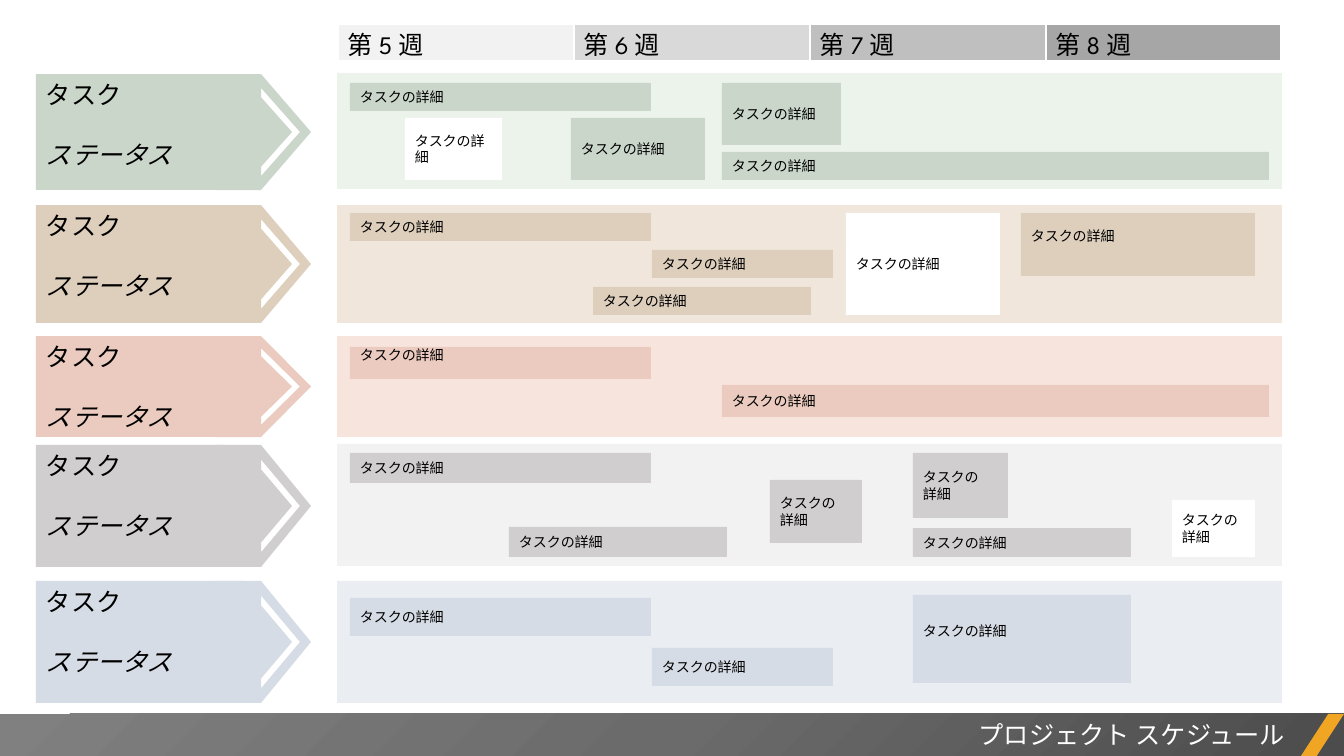
from pptx import Presentation
from pptx.dml.color import RGBColor
from pptx.enum.shapes import MSO_SHAPE
from pptx.enum.text import MSO_ANCHOR, MSO_AUTO_SIZE, PP_ALIGN
from pptx.oxml import parse_xml
from pptx.oxml.ns import nsdecls, qn
from pptx.util import Emu, Pt

RECTANGLE, PARALLELOGRAM = MSO_SHAPE.RECTANGLE, MSO_SHAPE.PARALLELOGRAM
TOP, MIDDLE = MSO_ANCHOR.TOP, MSO_ANCHOR.MIDDLE
LEFT, RIGHT = PP_ALIGN.LEFT, PP_ALIGN.RIGHT
GROW = MSO_AUTO_SIZE.SHAPE_TO_FIT_TEXT

BLACK = RGBColor(0x00, 0x00, 0x00)
WHITE = RGBColor(0xFF, 0xFF, 0xFF)
GREEN, PALE_GREEN = RGBColor(0xCA, 0xD6, 0xCA), RGBColor(0xEC, 0xF3, 0xEB)
SAND, PALE_SAND = RGBColor(0xDD, 0xCF, 0xBC), RGBColor(0xF0, 0xE6, 0xDC)
ROSE, PALE_ROSE = RGBColor(0xEB, 0xCB, 0xBF), RGBColor(0xF7, 0xE5, 0xDD)
GRAY, PALE_GRAY = RGBColor(0xD0, 0xCE, 0xCE), RGBColor(0xF2, 0xF2, 0xF2)
BLUE, PALE_BLUE = RGBColor(0xD6, 0xDC, 0xE5), RGBColor(0xEA, 0xEE, 0xF3)
AMBER = RGBColor(0xF0, 0xA6, 0x22)
FOOTER_STOPS = [(0, RGBColor(0x4C, 0x4C, 0x4C)), (50, RGBColor(0x6B, 0x6B, 0x6B)),
                (100, RGBColor(0x80, 0x80, 0x80))]

FONT = "League Spartan"
TITLE = "プロジェクト スケジュール"
TASK, STATUS = "タスク", "ステータス"
DETAIL, SPLIT_DETAIL = "タスクの詳細", "タスクの\n詳細"
WEEKS = [
    ("第 5 週", RGBColor(0xF2, 0xF2, 0xF2)),
    ("第 6 週", RGBColor(0xD9, 0xD9, 0xD9)),
    ("第 7 週", RGBColor(0xBF, 0xBF, 0xBF)),
    ("第 8 週", RGBColor(0xA6, 0xA6, 0xA6)),
]
# Details: (left, top, width, height), text, white box?, text raised by half a line?
LANES = [
    {"label": (74, 188), "band": 73, "height": 116, "colors": (GREEN, PALE_GREEN), "details": [
        ((350, 83, 301, 28), DETAIL, False, False),
        ((571, 118, 134, 62), DETAIL, False, False),
        ((405, 118, 97, 62), DETAIL, True, False),
        ((722, 83, 119, 62), DETAIL, False, False),
        ((722, 152, 547, 28), DETAIL, False, False)]},
    {"label": (205, 207), "band": 205, "height": 118, "colors": (SAND, PALE_SAND), "details": [
        ((350, 213, 301, 28), DETAIL, False, False),
        ((846, 213, 154, 102), DETAIL, True, False),
        ((1021, 213, 234, 63), DETAIL, False, True),
        ((652, 250, 181, 28), DETAIL, False, False),
        ((593, 287, 218, 28), DETAIL, False, False)]},
    {"label": (336, 188), "band": 336, "height": 101, "colors": (ROSE, PALE_ROSE), "details": [
        ((350, 347, 301, 32), DETAIL, False, True),
        ((722, 385, 547, 32), DETAIL, False, False)]},
    {"label": (445, 188), "band": 444, "height": 122, "colors": (GRAY, PALE_GRAY), "details": [
        ((350, 453, 301, 30), DETAIL, False, False),
        ((1172, 500, 83, 57), SPLIT_DETAIL, True, False),
        ((913, 453, 95, 65), SPLIT_DETAIL, False, False),
        ((770, 480, 92, 63), SPLIT_DETAIL, False, False),
        ((509, 527, 218, 30), DETAIL, False, False),
        ((913, 528, 218, 29), DETAIL, False, False)]},
    {"label": (581, 207), "band": 581, "height": 122, "colors": (BLUE, PALE_BLUE), "details": [
        ((350, 598, 301, 38), DETAIL, False, False),
        ((652, 648, 181, 38), DETAIL, False, False),
        ((913, 595, 218, 88), DETAIL, False, True)]},
]
# Arrow outlines: x in px, y as a share of the lane height
ARROW_HEAD = [(261, 0), (215, 0), (215, 1), (261, 1), (311, 0.5)]
ARROW_NOTCH = [(261, 0.8), (292, 0.5), (261, 0.2), (261, 0.12), (300, 0.5), (261, 0.88)]

SLIDE_W, SLIDE_H = 1344, 756
LABEL_LEFT, BAND_LEFT, BAND_W = 36, 337, 945
WEEK_LEFT, WEEK_TOP, WEEK_W, WEEK_H = 338, 24, 236, 33
FOOTER_TOP, FOOTER_H = 714, 42
DETAIL_LINE = 17
SCALE = 914400 / 100.8


def px(length):
    return Emu(round(length * SCALE))


def paint(shape, color):
    shape.shadow.inherit = False
    shape.fill.solid()
    shape.fill.fore_color.rgb = color
    shape.line.fill.background()


def add_block(shapes, box, color, kind=RECTANGLE):
    block = shapes.add_shape(kind, *map(px, box))
    paint(block, color)
    return block


def write(paragraph, text, size, color=BLACK, italic=None, align=LEFT):
    paragraph.alignment = align
    for index, line in enumerate(text.split("\n")):
        if index:
            paragraph.add_line_break()
        run = paragraph.add_run()
        run.text = line
        run.font.name = FONT
        run.font.size = Pt(size)
        run.font.italic = italic
        run.font.color.rgb = color


def add_arrow(shapes, top, height, color):
    outlines = [[(px(x), px(top + share * height)) for x, share in outline]
                for outline in (ARROW_HEAD, ARROW_NOTCH)]
    head, notch = outlines
    builder = shapes.build_freeform(*head[0], scale=1.0)
    builder.add_line_segments(head[1:], close=True)
    builder.move_to(*notch[0])
    builder.add_line_segments(notch[1:], close=True)
    paint(builder.convert_to_shape(), color)


def add_lane(slide, lane):
    shapes = slide.shapes.add_group_shape().shapes
    color, pale = lane["colors"]
    top, width = lane["label"]
    height = lane["height"]

    label = add_block(shapes, (LABEL_LEFT, top, width, height), color).text_frame
    label.vertical_anchor = TOP
    write(label.paragraphs[0], TASK, 18)
    status = label.add_paragraph()
    status.space_before = Pt(21.5)
    write(status, STATUS, 18, italic=True)

    add_arrow(shapes, top, height, color)
    add_block(shapes, (BAND_LEFT, lane["band"], BAND_W, height), pale)
    for box, text, is_white, is_raised in lane["details"]:
        frame = add_block(shapes, box, WHITE if is_white else color).text_frame
        frame.word_wrap = True
        frame.vertical_anchor = MIDDLE
        if is_raised:
            frame.margin_bottom = px(5 + DETAIL_LINE)
        write(frame.paragraphs[0], text, 10)


def add_cell_borders(cell):
    properties = cell._tc.get_or_add_tcPr()
    for index, side in enumerate(("lnL", "lnR", "lnT", "lnB")):
        properties.insert(index, parse_xml(
            f'<a:{side} {nsdecls("a")} w="{Pt(2.25)}"><a:solidFill>'
            f'<a:srgbClr val="{WHITE}"/></a:solidFill></a:{side}>'))


def add_weeks(slide):
    table = slide.shapes.add_table(1, len(WEEKS), px(WEEK_LEFT), px(WEEK_TOP),
                                   px(WEEK_W * len(WEEKS)), px(WEEK_H)).table
    table.first_row = table.horz_banding = False
    for column, (week, color) in enumerate(WEEKS):
        table.columns[column].width = px(WEEK_W)
        cell = table.cell(0, column)
        cell.margin_left, cell.margin_right = px(10), px(1)
        cell.margin_top, cell.margin_bottom = px(1), 0
        cell.fill.solid()
        cell.fill.fore_color.rgb = color
        add_cell_borders(cell)
        write(cell.text_frame.paragraphs[0], week, 18)


def add_footer(slide):
    bottom = FOOTER_TOP + FOOTER_H
    builder = slide.shapes.build_freeform(0, px(FOOTER_TOP), scale=1.0)
    builder.add_line_segments([(px(SLIDE_W), px(FOOTER_TOP)), (px(SLIDE_W), px(bottom)),
                               (0, px(bottom))], close=True)
    bar = builder.convert_to_shape()
    paint(bar, FOOTER_STOPS[0][1])
    stops = "".join(f'<a:gs pos="{share * 1000}"><a:srgbClr val="{color}"/></a:gs>'
                    for share, color in FOOTER_STOPS)
    properties = bar._element.spPr
    properties.replace(properties.find(qn("a:solidFill")), parse_xml(
        f'<a:gradFill {nsdecls("a")} rotWithShape="1"><a:gsLst>{stops}</a:gsLst>'
        '<a:path path="circle"><a:fillToRect l="100000" t="100000"/></a:path></a:gradFill>'))

    accent = add_block(slide.shapes, (1301, FOOTER_TOP, 43, FOOTER_H), AMBER, PARALLELOGRAM)
    accent.adjustments[0] = 0.65

    title = slide.shapes.add_textbox(*map(px, (529, FOOTER_TOP, 766, 40))).text_frame
    title.word_wrap = True
    title.auto_size = GROW
    write(title.paragraphs[0], TITLE, 18, WHITE, align=RIGHT)


def main():
    deck = Presentation()
    deck.slide_width, deck.slide_height = px(SLIDE_W), px(SLIDE_H)
    slide = deck.slides.add_slide(deck.slide_layouts[6])
    for lane in LANES:
        add_lane(slide, lane)
    add_weeks(slide)
    add_footer(slide)
    deck.save("out.pptx")


if __name__ == "__main__":
    main()
